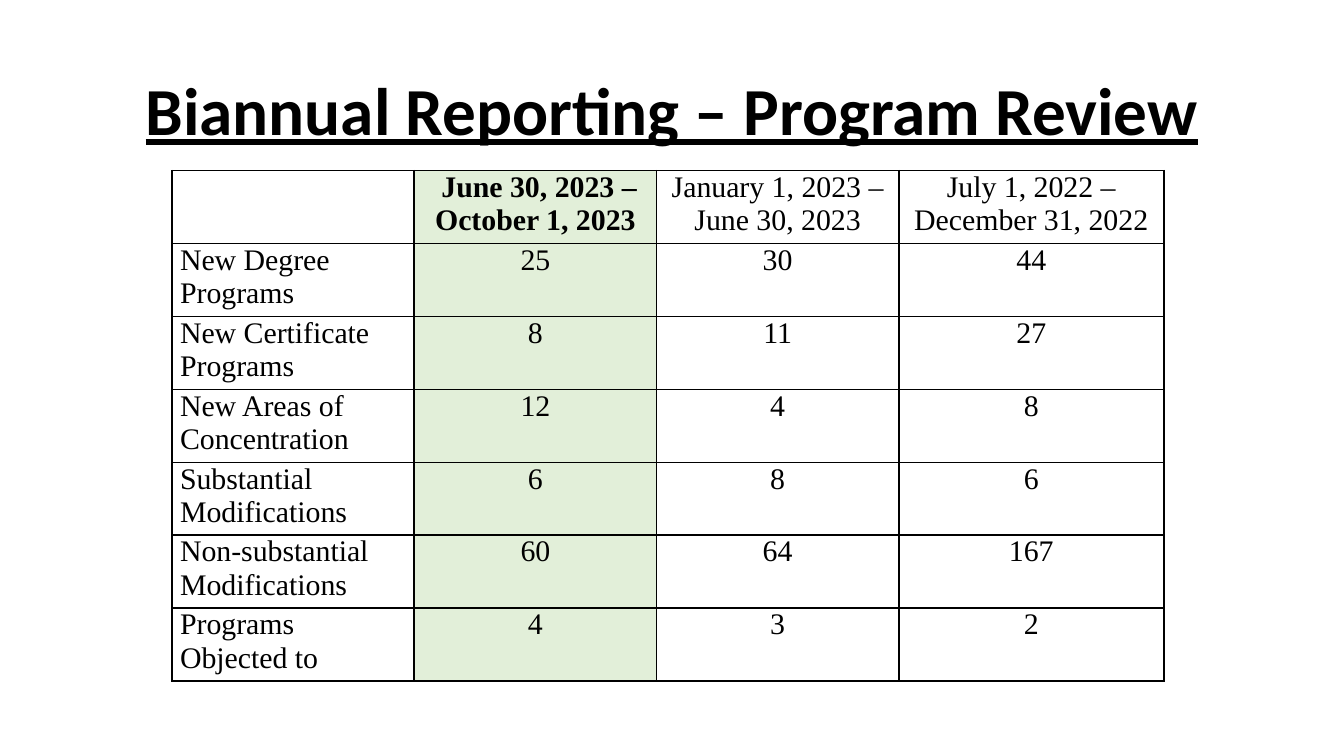
from pptx import Presentation
from pptx.dml.color import RGBColor as RGB
from pptx.enum.text import MSO_ANCHOR as Anchor, PP_ALIGN as Align
from pptx.oxml import parse_xml
from pptx.oxml.ns import nsdecls
from pptx.util import Inches, Pt

THEME = {
    "ink": "000000",
    "mark": "E2EFD9",
    "title": {"name": "Calibri", "size": Pt(36), "bold": True, "underline": True},
    "cell": {"name": "Times New Roman", "size": Pt(16), "bold": False},
    "line": Pt(1),
}
ROWS = [
    ["", " June 30, 2023 – October 1, 2023", "January 1, 2023 – June 30, 2023",
     "July 1, 2022 – December 31, 2022"],
    ["New Degree Programs", "25", "30", "44"],
    ["New Certificate Programs", "8", "11", "27"],
    ["New Areas of Concentration", "12", "4", "8"],
    ["Substantial Modifications", "6", "8", "6"],
    ["Non-substantial Modifications", "60", "64", "167"],
    ["Programs Objected to", "4", "3", "2"],
]
WIDE, HIGH = 7.38, 3.8  # whole table
PARTS = [1.8, 1.8, 1.8, 1.97]  # column shares
NOW = 1  # column of the current period


def style(item, values):
    for key, value in values.items():
        setattr(item, key, value)


def border(cell):
    props = cell._tc.get_or_add_tcPr()
    for side in "LRTB":
        props.append(parse_xml(
            f'<a:ln{side} {nsdecls("a")} w="{THEME["line"]}"><a:solidFill>'
            f'<a:srgbClr val="{THEME["ink"]}"/></a:solidFill></a:ln{side}>'))


# Widescreen slide
deck = Presentation()
style(deck, {"slide_width": Inches(10), "slide_height": Inches(10 * 9 / 16)})
slide = deck.slides.add_slide(deck.slide_layouts[6])
ink = RGB.from_string(THEME["ink"])

# Title
box = slide.shapes.add_textbox(Inches(0.69), Inches(0.3), Inches(8.62), Inches(1.09))
style(box.text_frame, {
    "word_wrap": True, "vertical_anchor": Anchor.MIDDLE,
    "margin_left": Inches(0.07), "margin_right": Inches(0.07),
    "margin_top": Inches(0.04), "margin_bottom": Inches(0.04)})
para = box.text_frame.paragraphs[0]
style(para, {"alignment": Align.CENTER, "line_spacing": 0.9})
run = para.add_run()
run.text = "Biannual Reporting – Program Review"
style(run.font, THEME["title"])
run.font.color.rgb = ink

# Table frame
table = slide.shapes.add_table(
    len(ROWS), len(PARTS), Inches(1.28), Inches(1.27),
    Inches(WIDE), Inches(HIGH)).table
style(table, {"first_row": False, "horz_banding": False})
for col, part in zip(table.columns, PARTS):
    col.width = Inches(WIDE * part / sum(PARTS))
for row in table.rows:
    row.height = Inches(HIGH / len(ROWS))

# Table cells
for r, row in enumerate(ROWS):
    for c, text in enumerate(row):
        cell = table.cell(r, c)
        style(cell, {"margin_left": Inches(0.06), "margin_right": Inches(0.06),
                     "margin_top": 0, "margin_bottom": 0})
        border(cell)
        if c == NOW:
            cell.fill.solid()
            cell.fill.fore_color.rgb = RGB.from_string(THEME["mark"])
        else:
            cell.fill.background()
        para = cell.text_frame.paragraphs[0]
        para.alignment = Align.CENTER if c else Align.LEFT
        if text:
            run = para.add_run()
            run.text = text
            style(run.font, THEME["cell"] | {"bold": r == 0 and c == NOW})
            run.font.color.rgb = ink

deck.save("out.pptx")
